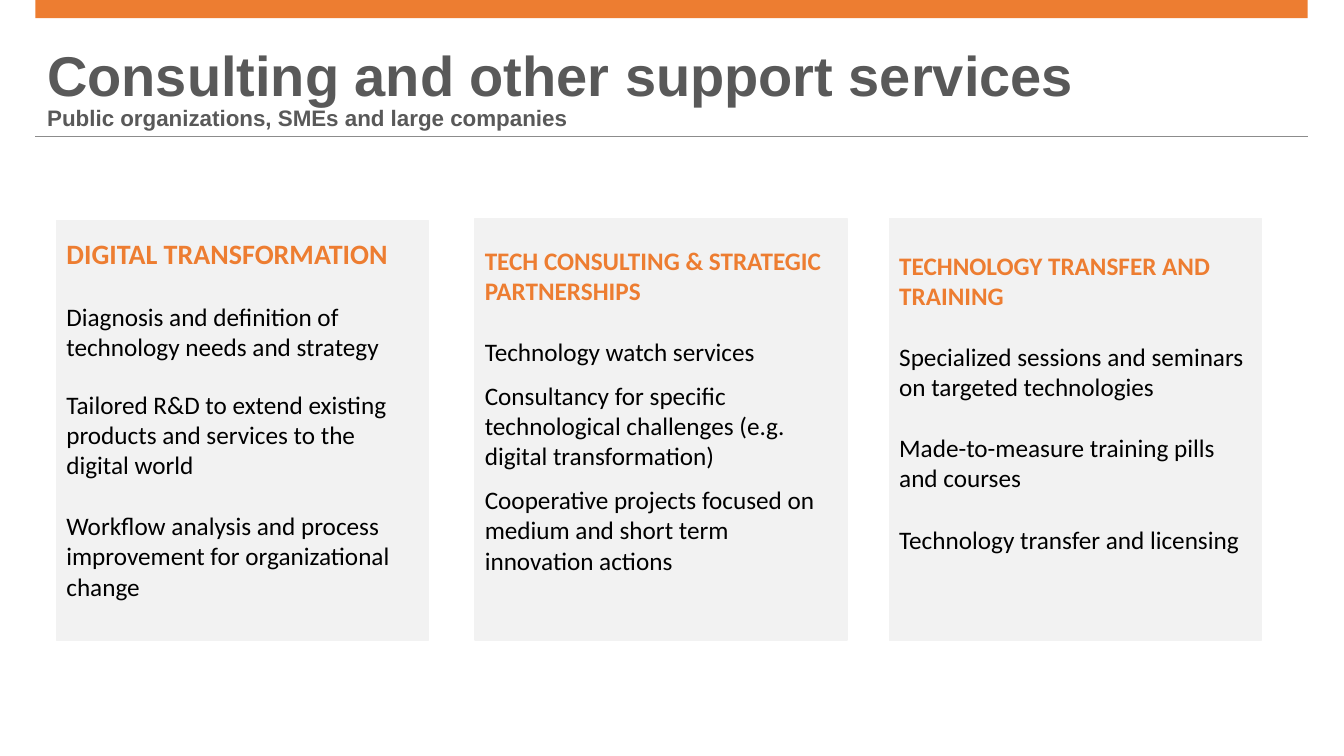
from lxml.etree import SubElement
from pptx import Presentation
from pptx.dml.color import RGBColor
from pptx.enum.shapes import MSO_CONNECTOR as Line, MSO_SHAPE as Shape
from pptx.enum.text import MSO_ANCHOR as Anchor, PP_ALIGN as Align
from pptx.oxml.ns import qn
from pptx.util import Inches, Pt

ORANGE, GRAY, PANEL, BLACK, RULE = "ED7D31", "595959", "F2F2F2", "000000", "8C8C8C"
CARD_WIDTH, CARD_BOTTOM = 3.69, 6.35
CARDS = [
    {"left": 0.56, "top": 2.19, "inset": 0.16, "heading_size": 20, "gaps": [22, 19.5, 22],
     "heading": "DIGITAL TRANSFORMATION",
     "items": ["Diagnosis and definition of technology needs and strategy",
               "Tailored R&D to extend existing products and services to the digital world",
               "Workflow analysis and process improvement for organizational change"]},
    {"left": 4.71, "top": 2.17, "inset": 0.26, "heading_size": 18, "gaps": [22, 9.75, 9.75],
     "heading": "TECH CONSULTING & STRATEGIC PARTNERSHIPS",
     "items": ["Technology watch services",
               "Consultancy for specific technological challenges (e.g. digital transformation)",
               "Cooperative projects focused on medium and short term innovation actions"]},
    {"left": 8.82, "top": 2.17, "inset": 0.31, "heading_size": 18, "gaps": [22, 22, 22],
     "heading": "TECHNOLOGY TRANSFER AND TRAINING",
     "items": ["Specialized sessions and seminars on targeted technologies",
               "Made-to-measure training pills and courses",
               "Technology transfer and licensing"]},
]


def color(value):
    """Turn a hex string into a colour."""
    return RGBColor.from_string(value)


def apply(target, values):
    """Set each attribute named in a dict."""
    for name, value in values.items():
        setattr(target, name, value)


def write(para, text, font, size, ink, bold):
    """Put one formatted run into a paragraph."""
    span = para.add_run()
    span.text = text
    apply(span.font, {"name": font, "size": Pt(size), "bold": bold})
    span.font.color.rgb = color(ink)


def set_frame(box, inset):
    """Wrap the text of a box from its top edge."""
    apply(box.text_frame, {
        "word_wrap": True, "vertical_anchor": Anchor.TOP,
        "margin_left": Inches(0.1), "margin_right": Inches(0.1),
        "margin_top": Inches(inset), "margin_bottom": Inches(0)})
    return box.text_frame


def add_panel(page, left, top, width, height, fill):
    """Add a plain filled rectangle."""
    panel = page.shapes.add_shape(
        Shape.RECTANGLE, Inches(left), Inches(top), Inches(width), Inches(height))
    panel.shadow.inherit = False
    panel.fill.solid()
    panel.fill.fore_color.rgb = color(fill)
    panel.line.color.rgb = color(fill)
    panel.line.width = Pt(1)
    return panel


def add_header(page, left, width):
    """Add the top band, the title lines and the rule below them."""
    band = add_panel(page, left, 0, width, 0.18, ORANGE)
    band.line.fill.background()
    rule = page.shapes.add_connector(
        Line.STRAIGHT, Inches(left), Inches(1.35), Inches(left + width), Inches(1.35))
    rule.line.color.rgb = color(RULE)
    rule.line.width = Pt(0.5)
    SubElement(rule.element.spPr, qn("a:effectLst"))
    for text, size, top, height, inset in [
            ("Consulting and other support services", 40, 0.38, 0.54, 0.1),
            ("Public organizations, SMEs and large companies", 16, 0.99, 0.28, 0.07)]:
        box = page.shapes.add_textbox(
            Inches(left + 0.02), Inches(top), Inches(width), Inches(height))
        para = set_frame(box, inset).paragraphs[0]
        para.line_spacing = 0.9
        write(para, text, "Arial", size, GRAY, True)


def add_card(page, card):
    """Add one service card with its heading and items."""
    panel = add_panel(page, card["left"], card["top"], CARD_WIDTH,
                      CARD_BOTTOM - card["top"], PANEL)
    frame = set_frame(panel, card["inset"])
    heading = frame.paragraphs[0]
    heading.alignment = Align.LEFT
    write(heading, card["heading"], "Calibri", card["heading_size"], ORANGE, True)
    for text, gap in zip(card["items"], card["gaps"]):
        para = frame.add_paragraph()
        apply(para, {"alignment": Align.LEFT, "space_before": Pt(gap)})
        write(para, text, "Calibri", 18, BLACK, False)


def main():
    """Build the slide and save it."""
    deck = Presentation()
    apply(deck, {"slide_width": Inches(13.33), "slide_height": Inches(7.5)})
    page = deck.slides.add_slide(deck.slide_layouts[6])
    add_header(page, 0.35, 12.62)
    for card in CARDS:
        add_card(page, card)
    deck.save("out.pptx")


if __name__ == "__main__":
    main()
